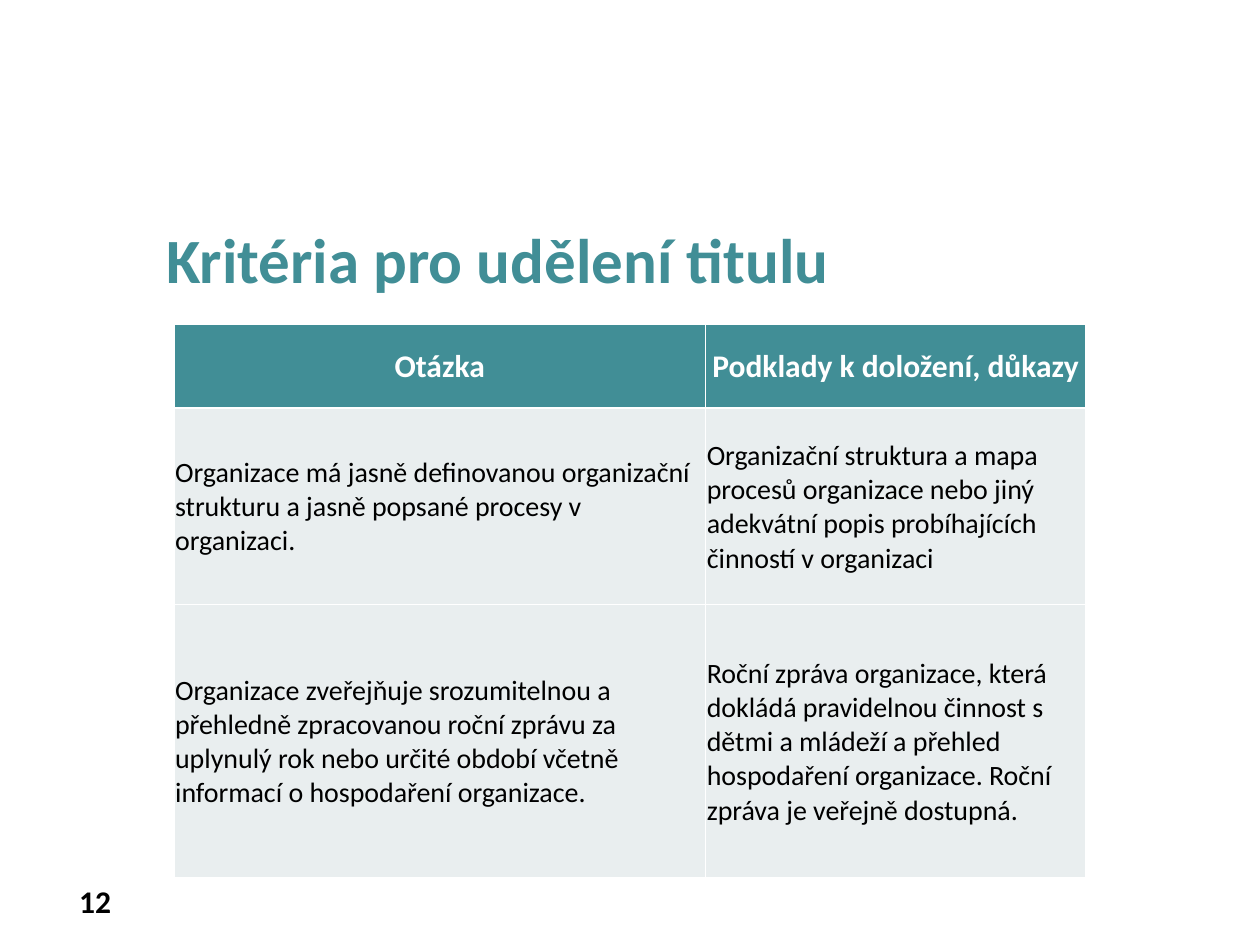
"""Build the slide with the criteria for awarding the title."""
from lxml import etree
from pptx import Presentation
from pptx.dml.color import RGBColor
from pptx.enum.text import MSO_ANCHOR, PP_ALIGN
from pptx.oxml.ns import qn
from pptx.util import Inches, Pt

MIDDLE, TOP = MSO_ANCHOR.MIDDLE, MSO_ANCHOR.TOP
LEFT, CENTER, RIGHT = PP_ALIGN.LEFT, PP_ALIGN.CENTER, PP_ALIGN.RIGHT

FONT = "Calibri"
COLORS = {"teal": "418E96", "pale": "E9EEEF", "white": "FFFFFF", "black": "000000"}

TITLE = "Kritéria pro udělení titulu"
SLIDE_NUMBER = "12"
CRITERIA = [
    ("Otázka", "Podklady k doložení, důkazy"),
    (
        "Organizace má jasně definovanou organizační strukturu a jasně popsané procesy v organizaci.",
        "Organizační struktura a mapa procesů organizace nebo jiný adekvátní popis "
        "probíhajících činností v organizaci",
    ),
    (
        "Organizace zveřejňuje srozumitelnou a přehledně zpracovanou roční zprávu za uplynulý rok "
        "nebo určité období včetně informací o hospodaření organizace.",
        "Roční zpráva organizace, která dokládá pravidelnou činnost s dětmi a mládeží a přehled "
        "hospodaření organizace. Roční zpráva je veřejně dostupná.",
    ),
]
COLUMN_WIDTHS = [4.22, 3.02]
ROW_HEIGHTS = [0.67, 1.56, 2.17]


def write(text_frame, text, size, color, bold, alignment):
    text_frame.text = text
    paragraph = text_frame.paragraphs[0]
    paragraph.alignment = alignment
    font = paragraph.runs[0].font
    font.name, font.size, font.bold = FONT, Pt(size), bold
    font.color.rgb = RGBColor.from_string(COLORS[color])


def add_text(slide, box, anchor, *style):
    text_frame = slide.shapes.add_textbox(*map(Inches, box)).text_frame
    text_frame.word_wrap = True
    text_frame.vertical_anchor = anchor
    write(text_frame, *style)


def add_borders(cell, color):
    properties = cell._tc.get_or_add_tcPr()
    for position, side in enumerate(("lnL", "lnR", "lnT", "lnB")):
        line = etree.Element(qn(f"a:{side}"), w=str(Pt(1)))
        fill = etree.SubElement(line, qn("a:solidFill"))
        etree.SubElement(fill, qn("a:srgbClr"), val=COLORS[color])
        properties.insert(position, line)


def add_criteria_table(slide):
    table = slide.shapes.add_table(
        len(ROW_HEIGHTS), len(COLUMN_WIDTHS), Inches(1.38), Inches(2.57),
        Inches(sum(COLUMN_WIDTHS)), Inches(sum(ROW_HEIGHTS)),
    ).table
    for column, width in zip(table.columns, COLUMN_WIDTHS):
        column.width = Inches(width)
    for row, height, texts in zip(table.rows, ROW_HEIGHTS, CRITERIA):
        row.height = Inches(height)
        header = texts is CRITERIA[0]
        style = (18, "white", True, CENTER) if header else (16, "black", False, LEFT)
        for cell, text in zip(row.cells, texts):
            cell.margin_left = cell.margin_right = cell.margin_top = Inches(0.01)
            cell.margin_bottom = 0
            cell.vertical_anchor = MIDDLE
            cell.fill.solid()
            cell.fill.fore_color.rgb = RGBColor.from_string(COLORS["teal" if header else "pale"])
            add_borders(cell, "white")
            write(cell.text_frame, text, *style)


def main():
    presentation = Presentation()
    presentation.slide_width, presentation.slide_height = Inches(10), Inches(7.5)
    slide = presentation.slides.add_slide(presentation.slide_layouts[6])
    add_text(slide, (0.27, 6.95, 0.71, 0.4), MIDDLE, SLIDE_NUMBER, 18, "black", True, RIGHT)
    add_text(slide, (1.22, 1.7, 8.28, 5.51), TOP, TITLE, 36, "teal", True, LEFT)
    add_criteria_table(slide)
    presentation.save("out.pptx")


if __name__ == "__main__":
    main()
